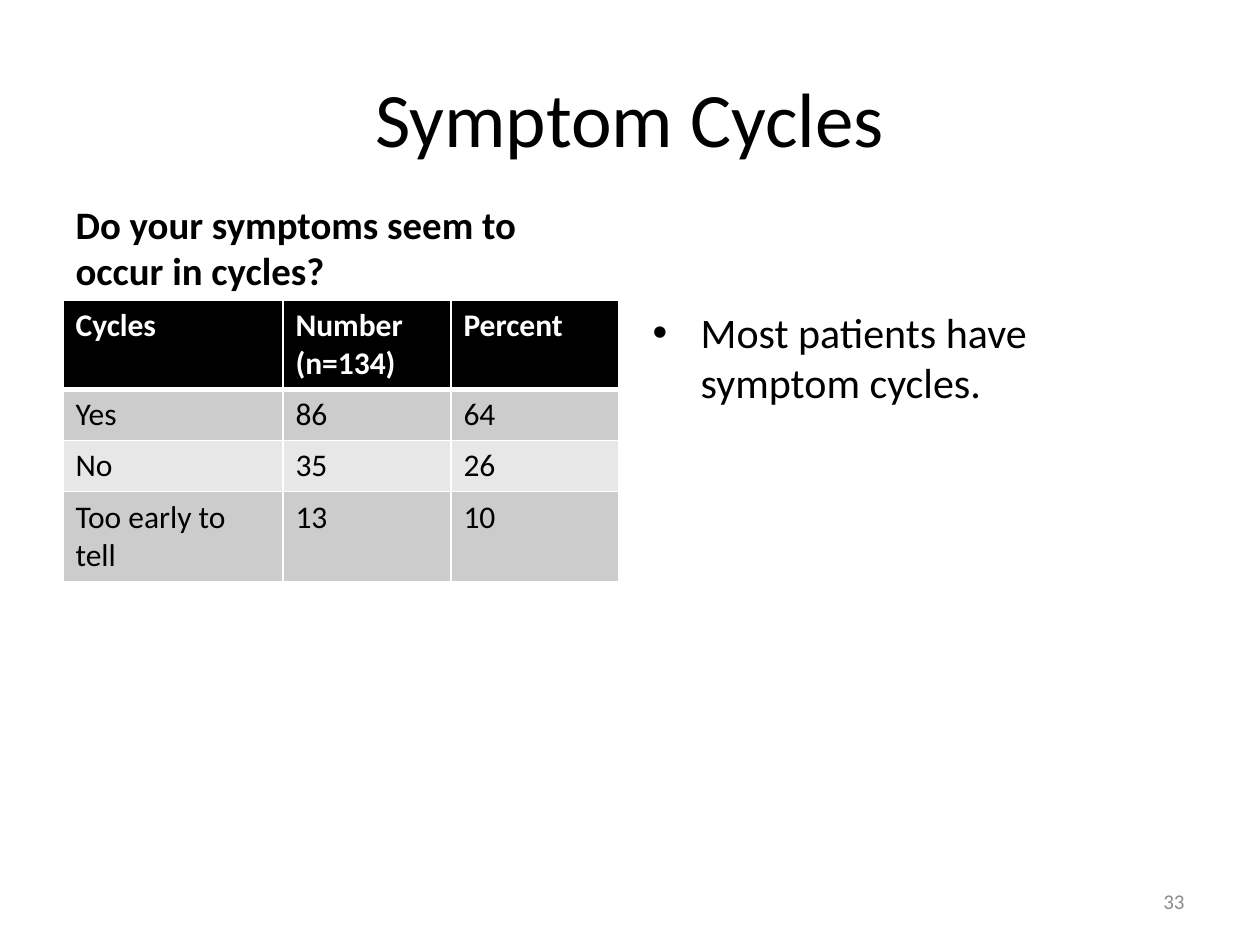
from lxml import etree
from pptx import Presentation
from pptx.dml.color import RGBColor
from pptx.enum.text import MSO_ANCHOR, MSO_AUTO_SIZE, PP_ALIGN
from pptx.oxml.ns import qn
from pptx.util import Emu, Pt

SCALE = 914400 / 126
FONT = "Calibri"
BLACK = RGBColor(0x00, 0x00, 0x00)
WHITE = RGBColor(0xFF, 0xFF, 0xFF)
GREY = RGBColor(0x8C, 0x8C, 0x8C)
BAND_DARK = RGBColor(0xCC, 0xCC, 0xCC)
BAND_LIGHT = RGBColor(0xE7, 0xE7, 0xE7)
LEFT, RIGHT = PP_ALIGN.LEFT, PP_ALIGN.RIGHT
CENTER = PP_ALIGN.CENTER
TOP, MIDDLE, BOTTOM = MSO_ANCHOR.TOP, MSO_ANCHOR.MIDDLE, MSO_ANCHOR.BOTTOM
NO_AUTOFIT = MSO_AUTO_SIZE.NONE

COMPARISON_LAYOUT = 5 - 1
COLUMN_WIDTHS = [220, 168, 168]
ROW_HEIGHTS = [88, 51, 51, 88]
CYCLES = [
    ["Cycles", "Number (n=134)", "Percent"],
    ["Yes", "86", "64"],
    ["No", "35", "26"],
    ["Too early to tell", "13", "10"],
]


def px(n):
    """Turn a length in px into EMU."""
    return Emu(round(n * SCALE))


def write(tf, text, size, color=BLACK, bold=False, align=LEFT):
    """Put one formatted paragraph into a text frame."""
    tf.text = text
    p = tf.paragraphs[0]
    p.alignment = align
    for r in p.runs:
        r.font.name = FONT
        r.font.size = Pt(size)
        r.font.bold = bold
        r.font.color.rgb = color


def set_text(sp, box, text, size, anchor=TOP, **style):
    """Place a text shape and fill it with formatted text."""
    sp.left, sp.top, sp.width, sp.height = map(px, box)
    tf = sp.text_frame
    tf.word_wrap = True
    tf.auto_size = NO_AUTOFIT
    tf.vertical_anchor = anchor
    write(tf, text, size, **style)


def add_border(cell, side, width):
    """Draw a white line on one side of a cell."""
    ln = etree.SubElement(cell._tc.get_or_add_tcPr(), qn(f"a:ln{side}"), w=str(Pt(width)))
    fill = etree.SubElement(ln, qn("a:solidFill"))
    etree.SubElement(fill, qn("a:srgbClr"), val=str(WHITE))


def format_cell(cell, text, row):
    """Write a cell and give it the borders and fill of its row."""
    header = row == 0
    write(cell.text_frame, text, 18, WHITE if header else BLACK, header)
    widths = {"L": 1, "R": 1, "T": 3 if row == 1 else 1, "B": 3 if header else 1}
    for side, width in widths.items():
        add_border(cell, side, width)
    cell.fill.solid()
    band = BAND_DARK if row % 2 else BAND_LIGHT
    cell.fill.fore_color.rgb = BLACK if header else band


def add_cycles_table(s, left, top):
    """Add the table of answers."""
    size = px(sum(COLUMN_WIDTHS)), px(sum(ROW_HEIGHTS))
    frame = s.shapes.add_table(len(CYCLES), len(CYCLES[0]), px(left), px(top), *size)
    table = frame.table
    for column, width in zip(table.columns, COLUMN_WIDTHS):
        column.width = px(width)
    for i, (row, height) in enumerate(zip(table.rows, ROW_HEIGHTS)):
        row.height = px(height)
        for cell, text in zip(row.cells, CYCLES[i]):
            format_cell(cell, text, i)


def set_bullet(p, indent):
    """Give a paragraph a round bullet with a hanging indent."""
    pPr = p._p.get_or_add_pPr()
    pPr.set("marL", str(px(indent)))
    pPr.set("indent", str(-px(indent)))
    etree.SubElement(pPr, qn("a:buFont"), typeface="Arial")
    etree.SubElement(pPr, qn("a:buChar"), char="•")


def main():
    """Build the slide and save it."""
    prs = Presentation()
    prs.slide_width, prs.slide_height = px(1260), px(945)
    s = prs.slides.add_slide(prs.slide_layouts[COMPARISON_LAYOUT])
    holders = {sp.placeholder_format.idx: sp for sp in s.placeholders}
    for idx in (2, 3):
        sp = holders[idx]
        sp.element.getparent().remove(sp.element)

    set_text(s.shapes.title, (63, 38, 1134, 158), "Symptom Cycles", 44, MIDDLE, align=CENTER)
    set_text(holders[1], (63, 212, 557, 88),
             "Do your symptoms seem to occur in cycles?", 22.2, BOTTOM, bold=True)
    add_cycles_table(s, 63, 300)
    set_text(holders[4], (640, 300, 557, 544), "Most patients have symptom cycles.", 24)
    set_bullet(holders[4].text_frame.paragraphs[0], 48)
    number = s.shapes.add_textbox(0, 0, 0, 0)
    set_text(number, (903, 876, 294, 50), "33", 12, MIDDLE, color=GREY, align=RIGHT)
    prs.save("out.pptx")


if __name__ == "__main__":
    main()
